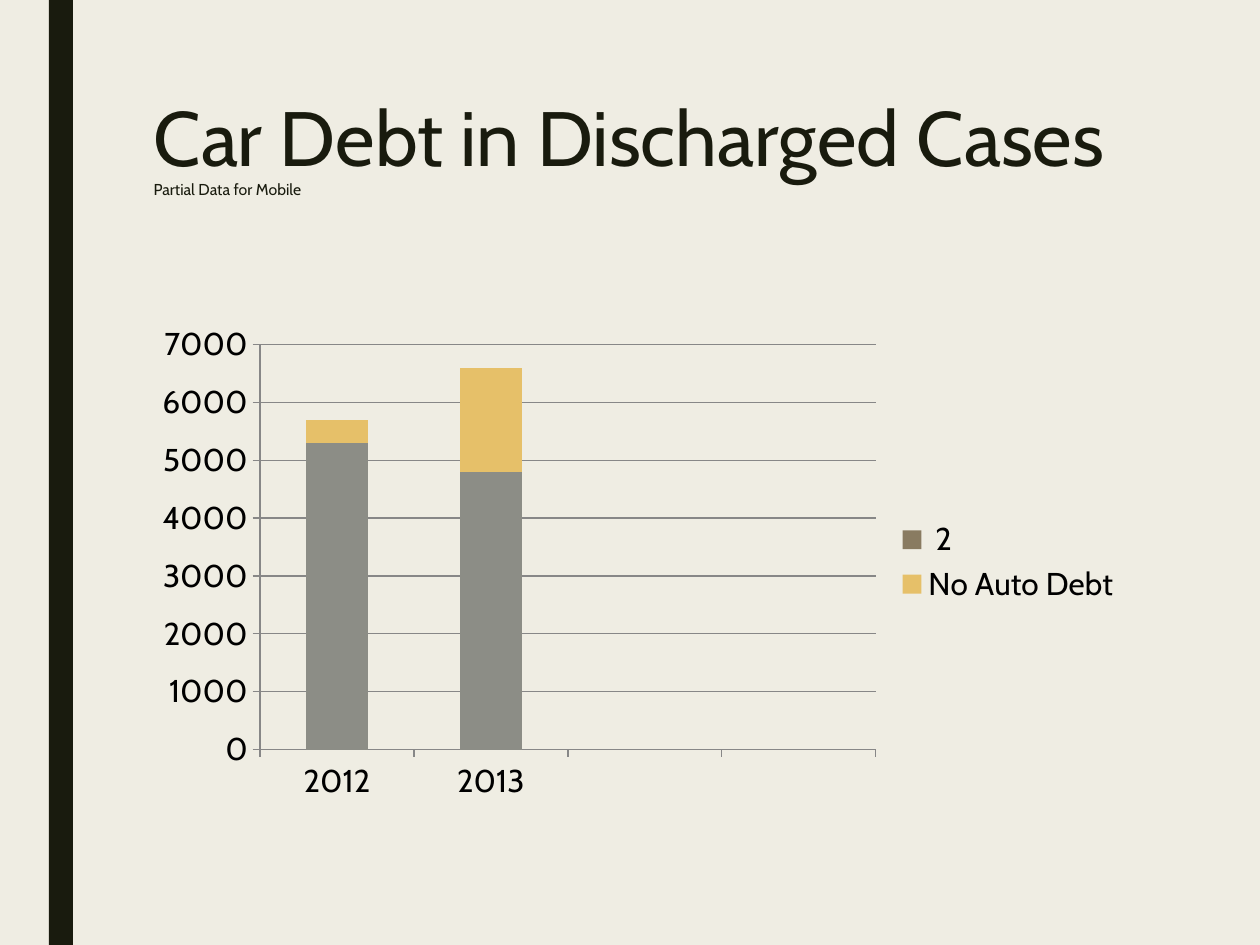
from dataclasses import dataclass

import pptx
import pptx.chart.data
import pptx.dml.color
import pptx.enum.chart
import pptx.enum.shapes
import pptx.enum.text
import pptx.oxml
import pptx.oxml.ns
import pptx.util

PX = pptx.util.Inches(1) // 126  # EMU in one px


@dataclass(frozen=True)
class Theme:
    font: str = "Cabin"
    background: str = "EFEDE3"
    dark: str = "191B0E"
    chart_text: str = "000000"
    grid: str = "878787"
    gray: str = "8C8D86"
    yellow: str = "E6C069"
    brown: str = "897B61"
    title_size: int = 44
    subtitle_size: int = 9
    chart_size: int = 18


THEME = Theme()


def color(value):
    return pptx.dml.color.RGBColor.from_string(value)


def box(*lengths):
    return [length * PX for length in lengths]


def format_font(font, size, text_color):
    font.name = THEME.font
    font.size = pptx.util.Pt(size)
    font.color.rgb = color(text_color)


def add_text(paragraph, text, size, text_color=THEME.dark):
    run = paragraph.add_run()
    run.text = text
    format_font(run.font, size, text_color)


def add_bar(slide, left, top, width, height):
    bar = slide.shapes.add_shape(
        pptx.enum.shapes.MSO_SHAPE.RECTANGLE, *box(left, top, width, height))
    bar.shadow.inherit = False
    bar.fill.solid()
    bar.fill.fore_color.rgb = color(THEME.dark)
    bar.line.fill.background()


def set_title(slide, left, top, width, height):
    title = slide.shapes.title
    title.left, title.top, title.width, title.height = box(left, top, width, height)
    frame = title.text_frame
    frame.word_wrap = True
    frame.auto_size = pptx.enum.text.MSO_AUTO_SIZE.NONE
    frame.vertical_anchor = pptx.enum.text.MSO_ANCHOR.TOP
    paragraph = frame.paragraphs[0]
    paragraph.alignment = pptx.enum.text.PP_ALIGN.LEFT
    paragraph.line_spacing = 0.89
    add_text(paragraph, "Car Debt in Discharged Cases ", THEME.title_size)
    add_text(paragraph, "Partial Data for Mobile", THEME.subtitle_size)


def format_axis(axis):
    axis.major_tick_mark = pptx.enum.chart.XL_TICK_MARK.OUTSIDE
    axis.minor_tick_mark = pptx.enum.chart.XL_TICK_MARK.NONE
    format_line(axis.format.line)


def format_line(line):
    line.color.rgb = color(THEME.grid)
    line.width = pptx.util.Pt(0.75)


def place_plot(chart, **fractions):
    """Fix the inner plot area as fractions of the chart."""
    plot_area = chart._chartSpace.chart.plotArea
    for layout in plot_area.findall(pptx.oxml.ns.qn("c:layout")):
        plot_area.remove(layout)
    modes = '<c:xMode val="edge"/><c:yMode val="edge"/>'
    values = "".join(f'<c:{key} val="{value}"/>' for key, value in fractions.items())
    plot_area.insert(0, pptx.oxml.parse_xml(
        f'<c:layout {pptx.oxml.ns.nsdecls("c")}><c:manualLayout>'
        f'<c:layoutTarget val="inner"/>{modes}{values}</c:manualLayout></c:layout>'))


def hide_legend_entry(legend, index):
    position = legend._element.find(pptx.oxml.ns.qn("c:legendPos"))
    position.addnext(pptx.oxml.parse_xml(
        f'<c:legendEntry {pptx.oxml.ns.nsdecls("c")}>'
        f'<c:idx val="{index}"/><c:delete val="1"/></c:legendEntry>'))


def add_debt_chart(slide, left, top, width, height):
    series_rows = [
        ("Series 1", (5300, 4800, None, None), THEME.gray),
        ("No Auto Debt", (400, 1800, None, None), THEME.yellow),
        (" 2", (None, None, None, None), THEME.brown),
    ]
    data = pptx.chart.data.CategoryChartData()
    data.categories = ["2012", "2013", "", ""]
    for name, values, _ in series_rows:
        data.add_series(name, values)
    chart = slide.shapes.add_chart(
        pptx.enum.chart.XL_CHART_TYPE.COLUMN_STACKED,
        *box(left, top, width, height), data).chart
    chart.has_title = False
    format_font(chart.font, THEME.chart_size, THEME.chart_text)

    # Columns
    plot = chart.plots[0]
    plot.gap_width = 150
    plot.overlap = 100
    plot.vary_by_categories = False
    for series, (_, _, fill) in zip(plot.series, series_rows):
        series.format.fill.solid()
        series.format.fill.fore_color.rgb = color(fill)

    # Axes
    format_axis(chart.category_axis)
    format_axis(chart.value_axis)
    chart.value_axis.minimum_scale = 0
    chart.value_axis.maximum_scale = 7000
    chart.value_axis.major_unit = 1000
    chart.value_axis.has_major_gridlines = True
    format_line(chart.value_axis.major_gridlines.format.line)
    place_plot(chart, x=0.12, y=0.06, w=0.62, h=0.82)

    # Legend
    chart.has_legend = True
    chart.legend.position = pptx.enum.chart.XL_LEGEND_POSITION.RIGHT
    chart.legend.include_in_layout = False
    hide_legend_entry(chart.legend, 0)


def main():
    presentation = pptx.Presentation()
    presentation.slide_width, presentation.slide_height = box(1260, 945)
    slide = presentation.slides.add_slide(presentation.slide_layouts[5])
    slide.background.fill.solid()
    slide.background.fill.fore_color.rgb = color(THEME.background)

    add_bar(slide, 49, 0, 24, 945)
    set_title(slide, 141, 94, 993, 204)
    add_debt_chart(slide, 141, 315, 993, 494)
    presentation.save("out.pptx")


if __name__ == "__main__":
    main()
